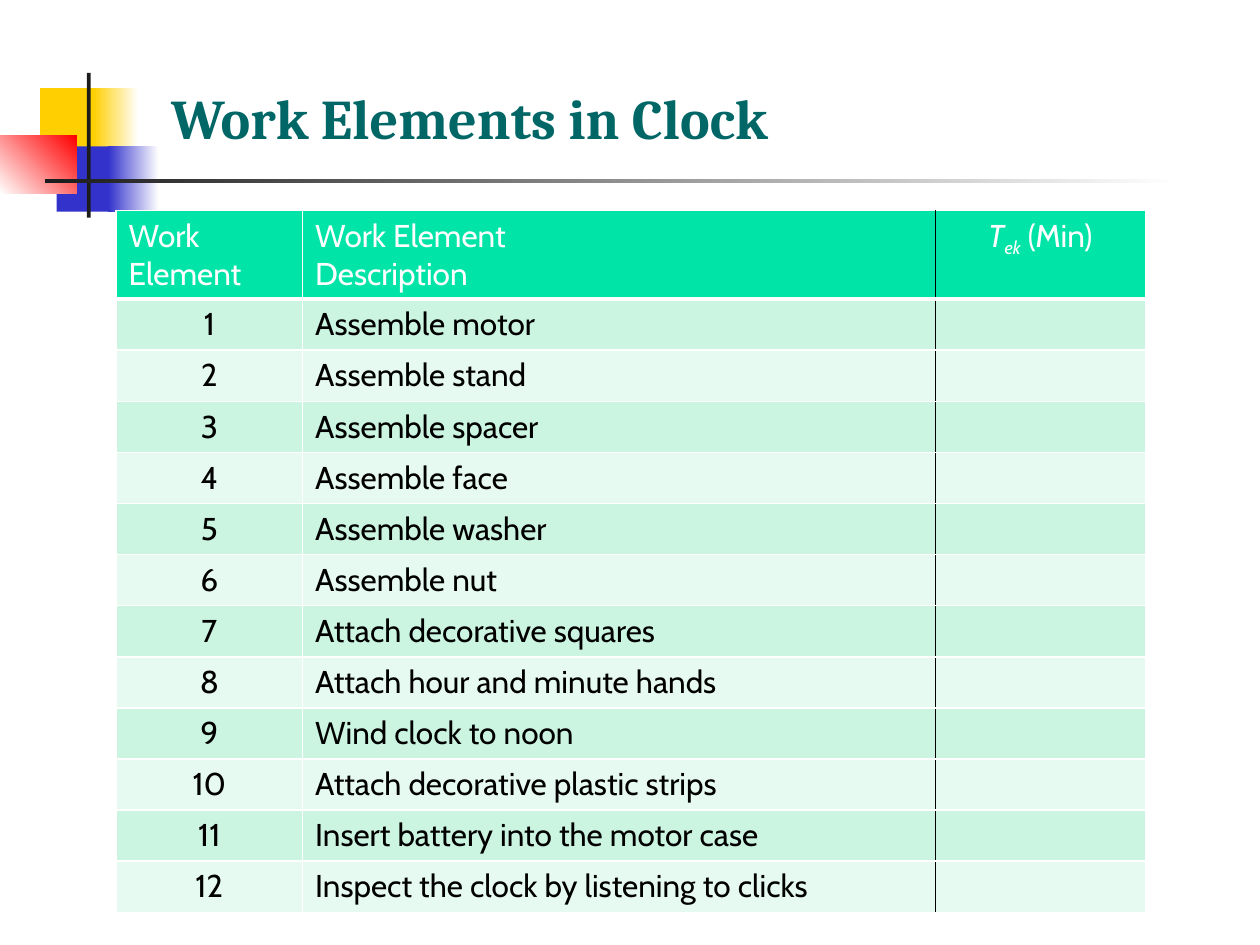
from lxml.etree import SubElement
from pptx import Presentation
from pptx.dml.color import RGBColor
from pptx.enum.shapes import MSO_SHAPE as Shape
from pptx.enum.text import MSO_ANCHOR as Anchor, PP_ALIGN as Align
from pptx.oxml.ns import qn
from pptx.util import Cm, Pt

TITLE = "Work Elements in Clock"
TASKS = [
    "Assemble motor", "Assemble stand", "Assemble spacer", "Assemble face",
    "Assemble washer", "Assemble nut", "Attach decorative squares",
    "Attach hour and minute hands", "Wind clock to noon",
    "Attach decorative plastic strips", "Insert battery into the motor case",
    "Inspect the clock by listening to clicks",
]

# Ornament: left, top, width, height in cm, colours (two make a gradient), angle
ORNAMENT = [
    (0.81, 1.78, 1.22, 1.32, ["FFCF01"], 0),
    (1.88, 1.78, 0.91, 1.32, ["FFCF01", "FFFFFF"], 0),
    (1.14, 2.95, 1.17, 1.32, ["3333CC"], 0),
    (2.18, 2.95, 1.02, 1.32, ["3333CC", "FFFFFF"], 0),
    (0, 2.74, 1.55, 1.17, ["FFFFFF", "FF0000"], 45),
    (1.75, 1.47, 0.08, 2.92, ["1C1C1C"], 0),
    (0.91, 3.61, 22.86, 0.08, ["1C1C1C", "FFFFFF"], 0),
]
COLUMNS = [3.76, 12.75, 4.24]
HEADER_HEIGHT, ROW_HEIGHT = 1.79, 1.03
HEADER_FILL, BANDS = "00E4A8", ["CCF5E1", "E7FAF1"]
WHITE, BLACK = "FFFFFF", "000000"


def color(code):
    return RGBColor.from_string(code)


def add_span(para, text, size, font, code, bold=False, italic=False):
    span = para.add_run()
    span.text = text
    span.font.size, span.font.name = Pt(size), font
    span.font.bold, span.font.italic = bold, italic
    span.font.color.rgb = color(code)
    return span


def add_block(page, left, top, width, height, colors, angle):
    block = page.shapes.add_shape(Shape.RECTANGLE, Cm(left), Cm(top), Cm(width), Cm(height))
    block.shadow.inherit = False
    block.line.fill.background()
    if len(colors) == 1:
        block.fill.solid()
        block.fill.fore_color.rgb = color(colors[0])
    else:
        block.fill.gradient()
        block.fill.gradient_angle = angle
        for stop, code in zip(block.fill.gradient_stops, colors):
            stop.color.rgb = color(code)


def style_cell(cell, row, column):
    # Borders come before the fill in the cell properties
    borders = {
        "a:lnL": (BLACK, 0.25) if column == 2 else (WHITE, 1),
        "a:lnR": (BLACK, 0.25) if column == 1 else (WHITE, 1),
        "a:lnT": (WHITE, 3 if row == 1 else 1),
        "a:lnB": (WHITE, 3 if row == 0 else 1),
    }
    properties = cell._tc.get_or_add_tcPr()
    for side, (code, width) in borders.items():
        line = SubElement(properties, qn(side), w=str(Pt(width)))
        SubElement(SubElement(line, qn("a:solidFill")), qn("a:srgbClr"), val=code)
    cell.fill.solid()
    cell.fill.fore_color.rgb = color(BANDS[(row - 1) % 2] if row else HEADER_FILL)


def add_table(page):
    count = len(TASKS) + 1
    height = HEADER_HEIGHT + ROW_HEIGHT * len(TASKS)
    table = page.shapes.add_table(count, len(COLUMNS), Cm(2.34), Cm(4.24),
                                  Cm(sum(COLUMNS)), Cm(height)).table
    for column, width in zip(table.columns, COLUMNS):
        column.width = Cm(width)
    for number, row in enumerate(table.rows):
        row.height = Cm(ROW_HEIGHT if number else HEADER_HEIGHT)
        for column, cell in enumerate(row.cells):
            style_cell(cell, number, column)

    # Header
    for column, lines in enumerate([("Work ", "Element"), ("Work Element ", "Description")]):
        para = table.cell(0, column).text_frame.paragraphs[0]
        add_span(para, lines[0], 18, "Cabin", WHITE)
        para.add_line_break()
        add_span(para, lines[1], 18, "Cabin", WHITE)
    para = table.cell(0, 2).text_frame.paragraphs[0]
    para.alignment = Align.CENTER
    add_span(para, "T", 18, "Cabin", WHITE, italic=True)
    index = add_span(para, "ek", 18, "Cabin", WHITE, italic=True)
    index.font._element.set("baseline", "-25000")
    add_span(para, " (Min)", 18, "Cabin", WHITE)

    # Work elements
    for number, task in enumerate(TASKS, 1):
        para = table.cell(number, 0).text_frame.paragraphs[0]
        para.alignment = Align.CENTER
        add_span(para, str(number), 18, "Cabin", BLACK)
        add_span(table.cell(number, 1).text_frame.paragraphs[0], task, 18, "Cabin", BLACK)


def main():
    deck = Presentation()
    deck.slide_width, deck.slide_height = Cm(25.4), Cm(19.05)
    page = deck.slides.add_slide(deck.slide_layouts[6])
    for block in ORNAMENT:
        add_block(page, *block)

    # Title
    box = page.shapes.add_textbox(Cm(3.2), Cm(0.58), Cm(21.64), Cm(2.59))
    frame = box.text_frame
    frame.word_wrap, frame.vertical_anchor = True, Anchor.BOTTOM
    add_span(frame.paragraphs[0], TITLE, 32, "Cambria", "006666", bold=True)

    add_table(page)
    deck.save("out.pptx")


if __name__ == "__main__":
    main()
